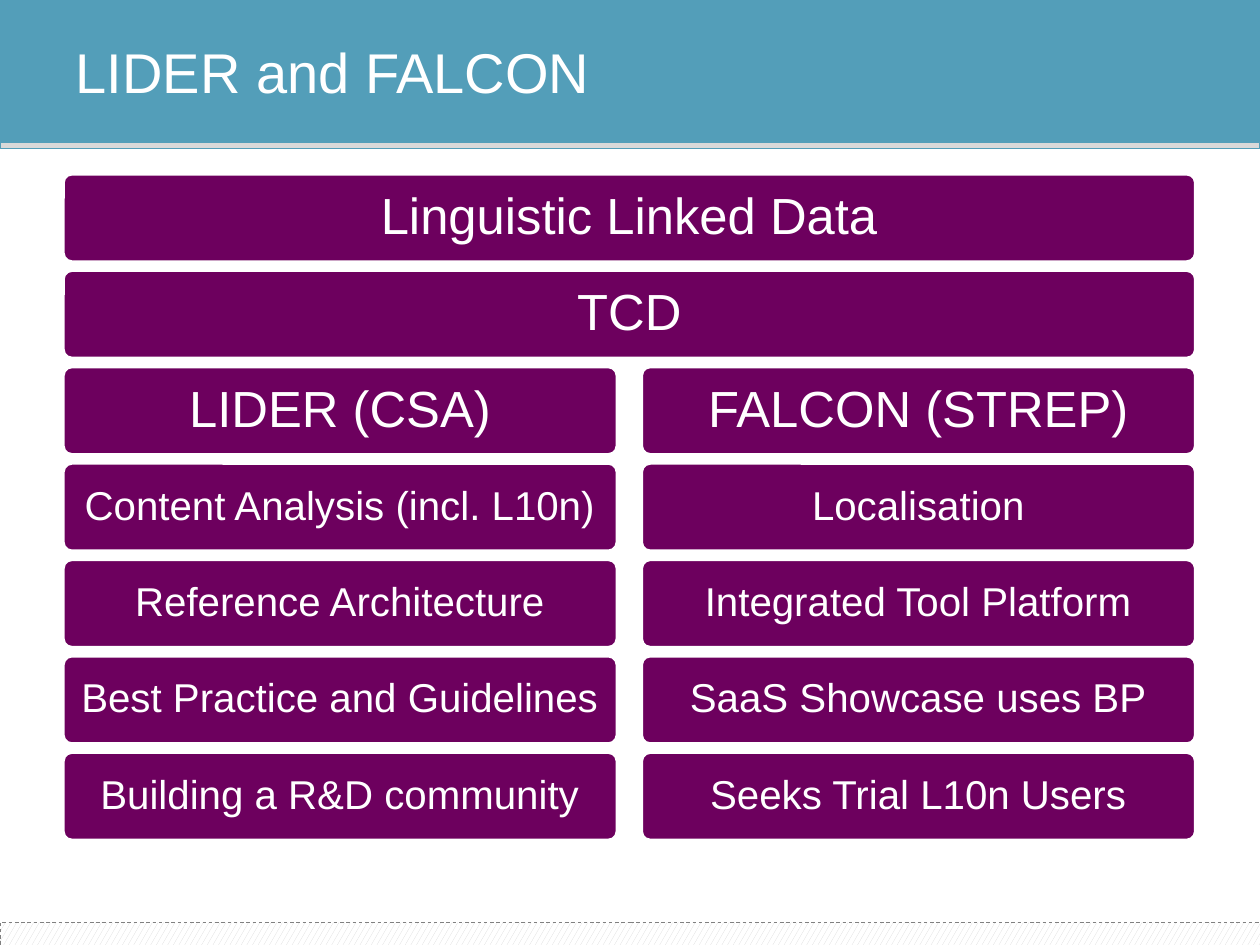
from dataclasses import dataclass

from pptx import Presentation
from pptx.dml.color import RGBColor
from pptx.enum.dml import MSO_LINE, MSO_PATTERN
from pptx.enum.shapes import MSO_SHAPE
from pptx.enum.text import MSO_ANCHOR, PP_ALIGN
from pptx.util import Inches, Pt

RECTANGLE = MSO_SHAPE.RECTANGLE
ROUNDED = MSO_SHAPE.ROUNDED_RECTANGLE
CONFETTI = MSO_PATTERN.LARGE_CONFETTI
DASH = MSO_LINE.DASH
MIDDLE = MSO_ANCHOR.MIDDLE
LEFT, CENTER = PP_ALIGN.LEFT, PP_ALIGN.CENTER


@dataclass(frozen=True)
class Theme:
    font: str = "Arial"
    header: RGBColor = RGBColor(0x53, 0x9E, 0xB9)
    rule: RGBColor = RGBColor(0xD9, 0xD9, 0xD9)
    block: RGBColor = RGBColor(0x6D, 0x00, 0x5E)
    dashes: RGBColor = RGBColor(0x80, 0x80, 0x80)
    white: RGBColor = RGBColor(0xFF, 0xFF, 0xFF)
    title_size: int = 32
    heading_size: int = 29
    detail_size: int = 23


THEME = Theme()

SLIDE_WIDTH, SLIDE_HEIGHT = 10, 7.5
GRID_LEFT, GRID_TOP = 0.5, 1.38
FULL_WIDTH, COLUMN_WIDTH = 8.99, 4.4
COLUMN_PITCH = FULL_WIDTH - COLUMN_WIDTH
BLOCK_HEIGHT = 0.7
ROW_PITCH = 0.765
HEADING_ROWS = 3

ROWS = [
    ["Linguistic Linked Data"],
    ["TCD"],
    ["LIDER (CSA)", "FALCON (STREP)"],
    ["Content Analysis (incl. L10n)", "Localisation"],
    ["Reference Architecture", "Integrated Tool Platform"],
    ["Best Practice and Guidelines", "SaaS Showcase uses BP"],
    ["Building a R&D community", "Seeks Trial L10n Users"],
]


def add_box(page, kind, left, top, width, height, color, line=None, weight=0.5):
    box = page.shapes.add_shape(
        kind, Inches(left), Inches(top), Inches(width), Inches(height)
    )
    box.shadow.inherit = False
    box.fill.solid()
    box.fill.fore_color.rgb = color
    if line is None:
        box.line.fill.background()
    else:
        box.line.color.rgb = line
        box.line.width = Pt(weight)
    return box


def write_text(box, text, size, align):
    frame = box.text_frame
    frame.text = text
    frame.word_wrap = True
    frame.vertical_anchor = MIDDLE
    para = frame.paragraphs[0]
    para.alignment = align
    para.font.name = THEME.font
    para.font.size = Pt(size)
    para.font.color.rgb = THEME.white
    return para


def add_bands(page):
    footer = add_box(page, RECTANGLE, 0, 7.32, SLIDE_WIDTH, 0.18, THEME.white, THEME.dashes)
    footer.rotation = 180
    footer.fill.patterned()
    footer.fill.pattern = CONFETTI
    footer.fill.fore_color.rgb = THEME.rule
    footer.fill.back_color.rgb = THEME.white
    footer.line.dash_style = DASH
    add_box(page, RECTANGLE, 0, 0, SLIDE_WIDTH, 1.18, THEME.header)
    add_box(page, RECTANGLE, 0, 1.13, SLIDE_WIDTH, 0.05, THEME.rule, THEME.header)


def add_block(page, text, left, top, width, size, inset):
    block = add_box(
        page, ROUNDED, left, top, width, BLOCK_HEIGHT, THEME.block, THEME.white, 2
    )
    block.adjustments[0] = 0.1
    para = write_text(block, text, size, CENTER)
    para.line_spacing = 0.9
    frame = block.text_frame
    frame.margin_left = frame.margin_right = Inches(inset)
    frame.margin_top = frame.margin_bottom = Inches(inset)


def add_grid(page):
    for row, labels in enumerate(ROWS):
        width = FULL_WIDTH if len(labels) == 1 else COLUMN_WIDTH
        is_heading = row < HEADING_ROWS
        size = THEME.heading_size if is_heading else THEME.detail_size
        inset = 0.12 if is_heading else 0.1
        for column, label in enumerate(labels):
            left = GRID_LEFT + column * COLUMN_PITCH
            add_block(page, label, left, GRID_TOP + row * ROW_PITCH, width, size, inset)


def place_title(page, text):
    title = page.shapes.title
    title.left, title.top = Inches(0.5), Inches(0.09)
    title.width, title.height = Inches(9), Inches(0.95)
    write_text(title, text, THEME.title_size, LEFT)
    title.element.getparent().append(title.element)


def main():
    deck = Presentation()
    deck.slide_width = Inches(SLIDE_WIDTH)
    deck.slide_height = Inches(SLIDE_HEIGHT)
    page = deck.slides.add_slide(deck.slide_layouts.get_by_name("Title Only"))
    add_bands(page)
    add_grid(page)
    place_title(page, "LIDER and FALCON")
    deck.save("out.pptx")


if __name__ == "__main__":
    main()
